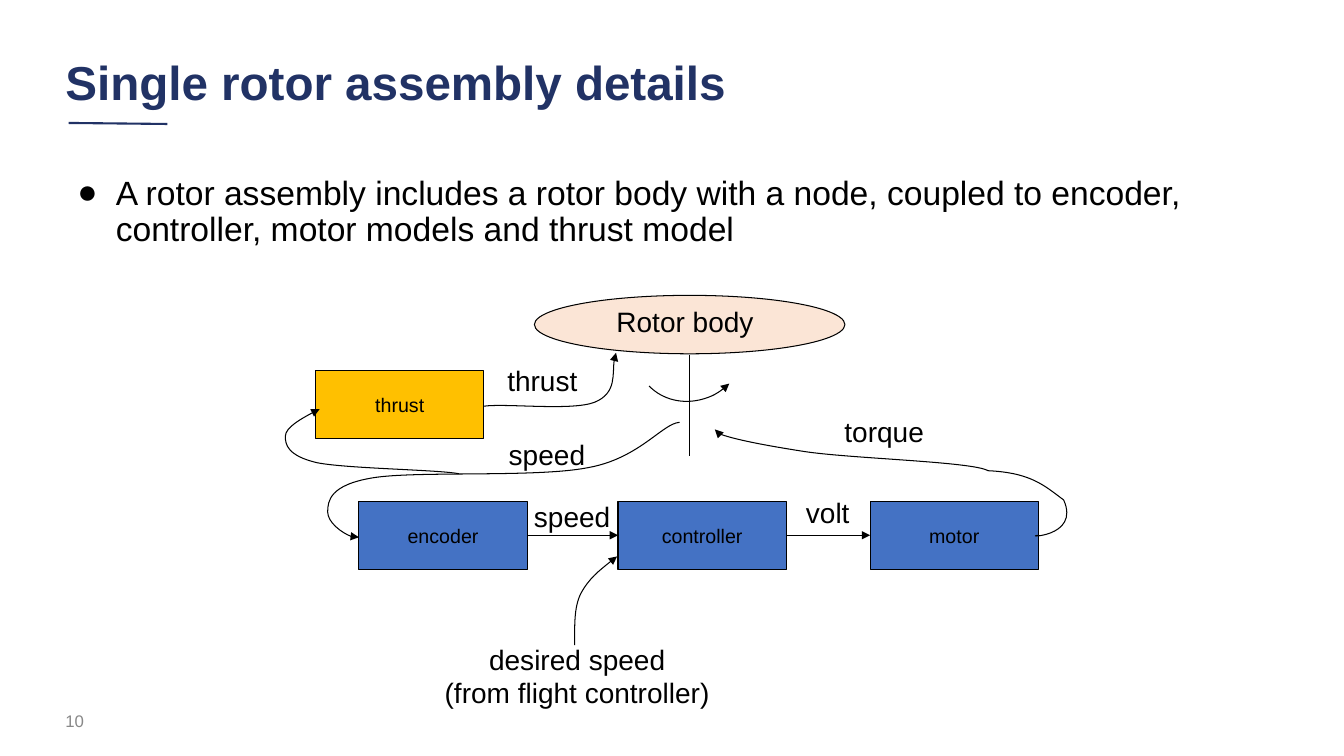
import pptx
import pptx.util
import pptx.dml.color
import pptx.enum.shapes
import pptx.enum.text
import pptx.oxml.ns

Inches = pptx.util.Inches
Pt = pptx.util.Pt
RGBColor = pptx.dml.color.RGBColor
Shape = pptx.enum.shapes.MSO_SHAPE
Align = pptx.enum.text.PP_ALIGN
Anchor = pptx.enum.text.MSO_ANCHOR
Fit = pptx.enum.text.MSO_AUTO_SIZE
qn = pptx.oxml.ns.qn

NAVY = RGBColor(0x21, 0x32, 0x65)
GRAY = RGBColor(0x88, 0x88, 0x88)
BLACK = RGBColor(0, 0, 0)
BLUE = RGBColor(0x44, 0x72, 0xC4)
GOLD = RGBColor(0xFF, 0xC0, 0x00)
PEACH = RGBColor(0xFB, 0xE5, 0xD6)
BOX_W, BOX_H = 1.67, 0.67
ROW = 4.98


def add(node, tag, **attrs):
    """Append a drawing element and return it."""
    child = node.makeelement(qn(f"a:{tag}"), attrs)
    node.append(child)
    return child


def mark(para, sign):
    """Give a paragraph a hanging bullet."""
    props = para._p.get_or_add_pPr()
    props.set("marL", str(Inches(0.5)))
    props.set("indent", str(Inches(-0.38)))
    add(add(props, "buClr"), "srgbClr", val=str(BLACK))
    add(props, "buFont", typeface="Arial")
    add(props, "buChar", char=sign)


def put(frame, text, size=20, color=BLACK, bold=False, align=Align.CENTER,
        anchor=Anchor.TOP, wrap=False, grow=False, space=None, bullet=None):
    """Write formatted lines of text into a text frame."""
    frame.word_wrap = wrap
    frame.auto_size = Fit.SHAPE_TO_FIT_TEXT if grow else Fit.NONE
    frame.vertical_anchor = anchor
    for i, words in enumerate(text.split("\n")):
        para = frame.paragraphs[0] if i == 0 else frame.add_paragraph()
        para.alignment = align
        if space:
            para.line_spacing = space
        if bullet:
            mark(para, bullet)
        run = para.add_run()
        run.text = words
        run.font.name = "Arial"
        run.font.size = Pt(size)
        run.font.bold = bold
        run.font.color.rgb = color


def note(slide, x, y, w, h, text, **form):
    """Add a text box."""
    box = slide.shapes.add_textbox(Inches(x), Inches(y), Inches(w), Inches(h))
    put(box.text_frame, text, **form)


def ink(item, color=BLACK, width=0.75, end=None):
    """Style an outline, with an arrowhead if an end is named."""
    item.line.color.rgb = color
    item.line.width = Pt(width)
    if end:
        add(item._element.spPr.find(qn("a:ln")), end, type="triangle")


def block(slide, x, y, w, h, kind, fill=None, end=None):
    """Add a preset shape with a thin outline."""
    item = slide.shapes.add_shape(
        kind, Inches(x), Inches(y), Inches(w), Inches(h))
    item.shadow.inherit = False
    if fill is None:
        item.fill.background()
    else:
        item.fill.solid()
        item.fill.fore_color.rgb = fill
    ink(item, end=end)
    return item


def part(slide, x, y, name, fill):
    """Add a labelled model box."""
    item = block(slide, x, y, BOX_W, BOX_H, Shape.RECTANGLE, fill)
    put(item.text_frame, name, size=14, anchor=Anchor.MIDDLE)


def rule(slide, x1, y1, x2, y2, **form):
    """Add a straight line."""
    item = slide.shapes.add_connector(
        pptx.enum.shapes.MSO_CONNECTOR.STRAIGHT,
        Inches(x1), Inches(y1), Inches(x2), Inches(y2))
    ink(item, **form)
    add(item._element.spPr, "effectLst")


def curve(slide, *knots, end="tailEnd"):
    """Draw an arrow along joined cubic curves."""
    dots = [(Inches(x), Inches(y)) for x, y in knots]
    pen = slide.shapes.build_freeform(*dots[0])
    pen.add_line_segments(dots[3::3], close=False)
    item = pen.convert_to_shape()
    item.shadow.inherit = False
    item.fill.background()
    ink(item, end=end)
    track = item._element.spPr.find(".//" + qn("a:path"))
    for i, old in enumerate(track.findall(qn("a:lnTo"))):
        track.remove(old)
        arc = add(track, "cubicBezTo")
        for x, y in dots[3 * i + 1:3 * i + 4]:
            add(arc, "pt", x=str(x - item.left), y=str(y - item.top))


def main():
    """Build the rotor assembly slide."""
    deck = pptx.Presentation()
    deck.slide_width, deck.slide_height = Inches(13.33), Inches(7.5)
    slide = deck.slides.add_slide(deck.slide_layouts[6])

    rule(slide, 0.68, 1.22, 1.66, 1.23, color=NAVY, width=1.5)
    note(slide, 0.55, 6.95, 3, 0.4, "10", size=12, color=GRAY,
         align=Align.LEFT, anchor=Anchor.MIDDLE, wrap=True)
    note(slide, 0.55, 0.46, 11.12, 0.76, "Single rotor assembly details",
         size=34, color=NAVY, bold=True, align=Align.LEFT,
         anchor=Anchor.MIDDLE, wrap=True, space=0.9)
    note(slide, 0.55, 1.7, 12.24, 4.76,
         "A rotor assembly includes a rotor body with a node, coupled to "
         "encoder, controller, motor models and thrust model",
         size=24, align=Align.LEFT, wrap=True, space=0.9, bullet="●")

    block(slide, 5.3, 2.93, 3.08, 0.58, Shape.OVAL, PEACH)
    rule(slide, 6.84, 3.52, 6.84, 4.52)
    spin = block(slide, 6.27, 2.88, 1.17, 1.08, Shape.ARC, end="headEnd")
    spin.rotation = 135.6

    row = [(3.56, "encoder"), (6.13, "controller"), (8.63, "motor")]
    for x, name in row:
        part(slide, x, ROW, name, BLUE)
    part(slide, 3.13, 3.68, "thrust", GOLD)
    for (left, _), (right, _) in zip(row, row[1:]):
        rule(slide, left + BOX_W, 5.31, right, 5.31, end="tailEnd")

    curve(slide, (6.74, 4.19), (6.57, 4.2), (6.34, 4.55), (5.83, 4.64),
          (5.32, 4.74), (4.13, 4.67), (3.7, 4.74),
          (3.27, 4.81), (3.25, 4.97), (3.25, 5.08),
          (3.25, 5.18), (3.47, 5.36), (3.56, 5.33))
    curve(slide, (10.3, 5.31), (10.13, 5.33), (10.72, 5.34), (10.55, 4.96),
          (10.36, 4.82), (10.23, 4.69), (9.8, 4.67),
          (9.65, 4.58), (8.44, 4.55), (7.98, 4.48),
          (7.53, 4.41), (7, 4.3), (7.09, 4.26))
    curve(slide, (4.55, 4.7), (4.35, 4.66), (3.43, 4.65), (3.14, 4.59),
          (2.85, 4.52), (2.83, 4.41), (2.83, 4.33),
          (2.83, 4.24), (3.08, 4.1), (3.17, 4.06))
    curve(slide, (4.8, 4.03), (5.02, 4), (5.68, 4.08), (5.9, 3.99),
          (6.12, 3.9), (6.06, 3.61), (6.11, 3.5))

    for x, y, w, text in [
            (7.89, 4.87, 0.64, "volt"),
            (5.19, 4.91, 0.97, "speed"),
            (8.27, 4.06, 1, "torque"),
            (4.93, 3.56, 0.9, "thrust"),
            (4.94, 4.29, 0.97, "speed"),
            (6.01, 2.97, 1.57, "Rotor body")]:
        note(slide, x, y, w, 0.44, text, grow=True)
    curve(slide, (6.12, 5.52), (5.98, 5.63), (5.84, 5.74), (5.76, 5.89),
          (5.69, 6.03), (5.7, 6.22), (5.7, 6.4), end="headEnd")
    note(slide, 4.3, 6.32, 2.85, 0.77,
         "desired speed\n(from flight controller)", grow=True)

    deck.save("out.pptx")


if __name__ == "__main__":
    main()
